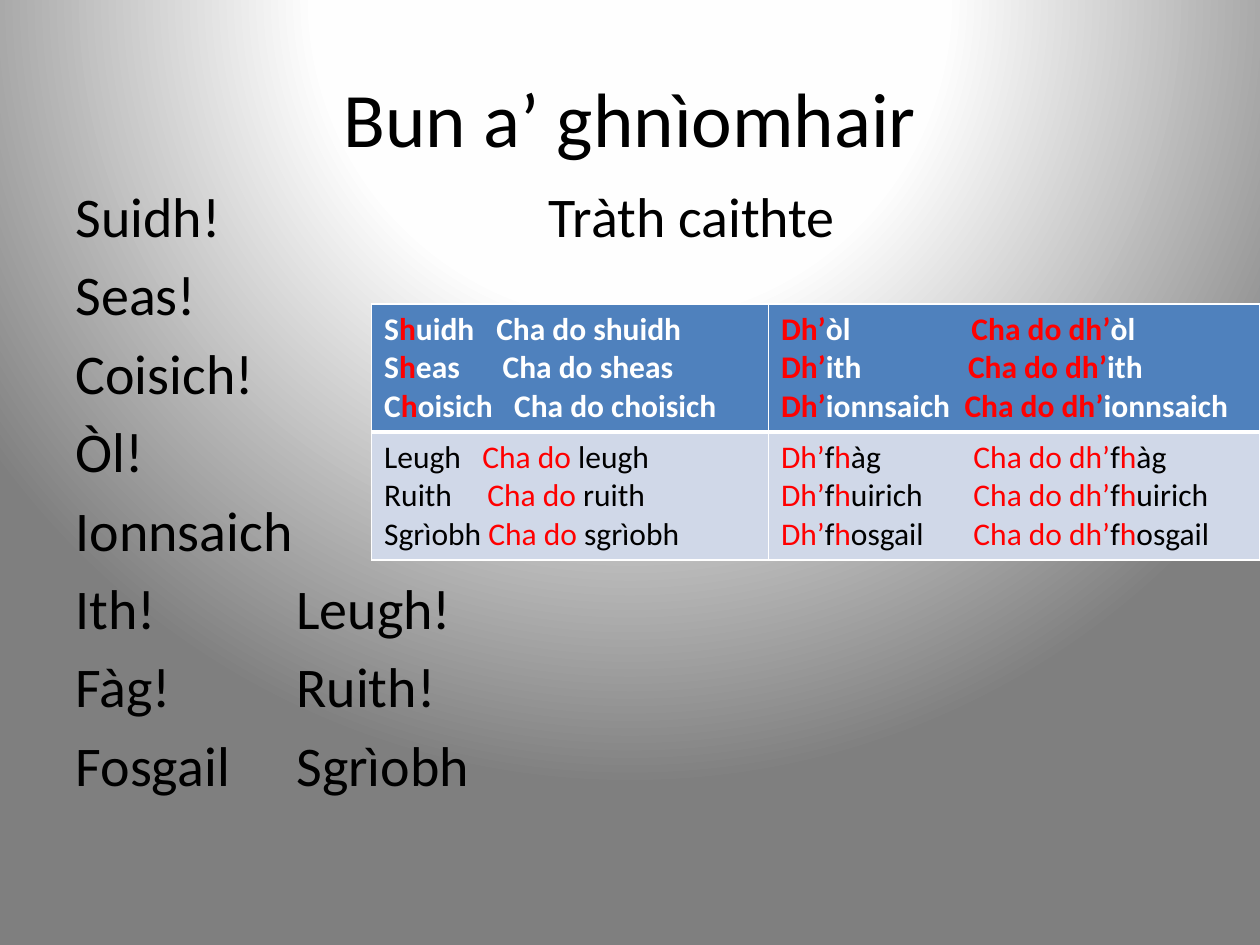
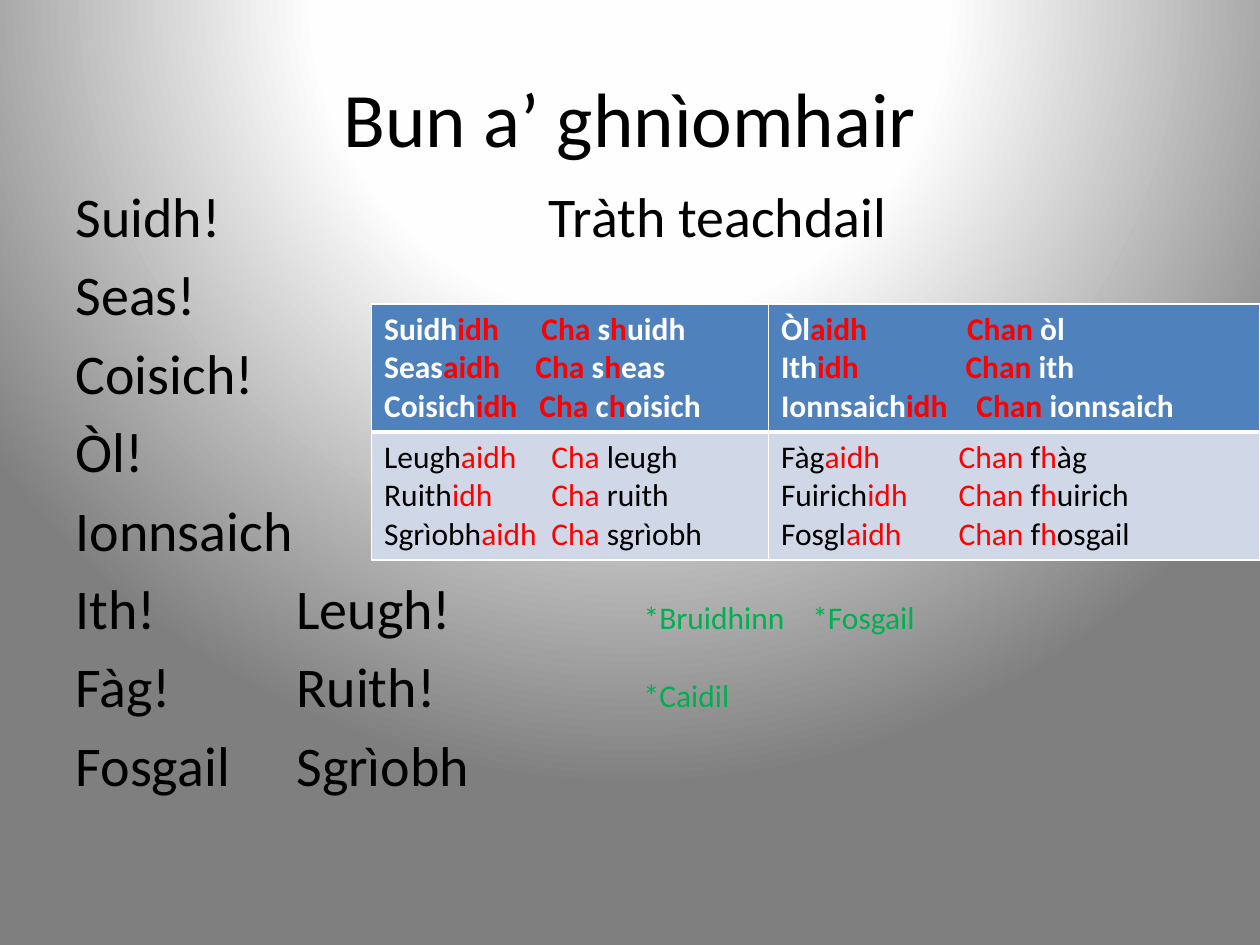
from lxml import etree
from pptx import Presentation
from pptx.dml.color import RGBColor
from pptx.enum.text import MSO_ANCHOR, MSO_AUTO_SIZE, PP_ALIGN
from pptx.oxml import parse_xml
from pptx.oxml.ns import nsdecls, qn
from pptx.util import Cm, Pt

BLACK = RGBColor(0x00, 0x00, 0x00)
WHITE = RGBColor(0xFF, 0xFF, 0xFF)
RED = RGBColor(0xFF, 0x00, 0x00)
GREEN = RGBColor(0x00, 0xB0, 0x50)
HEADER_BLUE = RGBColor(0x4F, 0x81, 0xBD)
PALE_BLUE = RGBColor(0xD0, 0xD8, 0xE8)
FONT = "Calibri"
TITLE = "Bun a’ ghnìomhair"
TENSE_TAB = [9.54]
VERB_TABS = [4.45, 11.45, 14.85]

# Text in [brackets] is accented. Each cell is (tab stop of each line in cm, lines).
TENSES = [
    {
        "verbs": ["Suidh!\tTràth caithte", "Seas!", "Coisich!", "Òl!", "Ionnsaich",
                  "Ith!\tLeugh!", "Fàg!\tRuith!", "Fosgail\tSgrìobh"],
        "cells": [
            [([2.26, 2.39, 2.62], ["S[h]uidh\tCha do shuidh",
                                   "S[h]eas\tCha do sheas",
                                   "C[h]oisich\tCha do choisich"]),
             ([3.84, 3.77, 3.7], ["[Dh’]òl\t[Cha do dh’]òl",
                                  "[Dh’]ith\t[Cha do dh’]ith",
                                  "[Dh’]ionnsaich\t[Cha do dh’]ionnsaich"])],
            [([1.98, 2.08, 2.1], ["Leugh\t[Cha do ]leugh",
                                  "Ruith\t[Cha do ]ruith",
                                  "Sgrìobh\t[Cha do ]sgrìobh"]),
             ([3.88] * 3, ["[Dh’]f[h]àg\t[Cha do dh’]f[h]àg",
                           "[Dh’]f[h]uirich\t[Cha do dh’]f[h]uirich",
                           "[Dh’]f[h]osgail\t[Cha do dh’]f[h]osgail"])],
        ],
    },
    {
        "verbs": ["Suidh!\tTràth teachdail", "Seas!", "Coisich!", "Òl!", "Ionnsaich",
                  "Ith!\tLeugh!\t[*Bruidhinn\t*Fosgail]",
                  "Fàg!\tRuith!\t[*Caidil]", "Fosgail\tSgrìobh"],
        "cells": [
            [([3.17, 3.05, 3.13], ["Suidh[idh\tCha] s[h]uidh",
                                   "Seas[aidh\tCha ]s[h]eas",
                                   "Coisich[idh\tCha] c[h]oisich"]),
             ([3.75, 3.72, 3.94], ["Òl[aidh\tChan ]òl",
                                   "Ith[idh\tChan ]ith",
                                   "Ionnsaich[idh\tChan ]ionnsaich"])],
            [([3.37] * 3, ["Leugh[aidh\tCha ]leugh",
                           "Ruith[idh\tCha ]ruith",
                           "Sgrìobh[aidh\tCha ]sgrìobh"]),
             ([3.58] * 3, ["Fàg[aidh\tChan ]f[h]àg",
                           "Fuirich[idh\tChan ]f[h]uirich",
                           "Fosgl[aidh\tChan ]f[h]osgail"])],
        ],
    },
]


def write_lines(text_frame, lines, size, color, accent, bold=False):
    """Fill the frame; bracketed parts get the accent colour at 18 pt."""
    text_frame.text = "\n".join([""] * len(lines))
    for paragraph, line in zip(text_frame.paragraphs, lines):
        for index, part in enumerate(line.replace("]", "[").split("[")):
            if part:
                run = paragraph.add_run()
                run.text = part
                run.font.name = FONT
                run.font.bold = bold
                run.font.size = Pt(18 if index % 2 else size)
                run.font.color.rgb = accent if index % 2 else color


def set_tabs(paragraph, stops):
    """Give the paragraph left tab stops, in cm."""
    tab_list = etree.SubElement(paragraph._p.get_or_add_pPr(), qn("a:tabLst"))
    for stop in stops:
        etree.SubElement(tab_list, qn("a:tab"), pos=str(int(Cm(stop))), algn="l")


presentation = Presentation()
presentation.slide_width = Cm(25.4)
presentation.slide_height = Cm(19.05)

# Shared radial background
master = presentation.slide_master
master.background.fill.solid()
solid_fill = master.element.find(".//" + qn("p:bgPr")).find(qn("a:solidFill"))
stops = "".join(
    f'<a:gs pos="{position * 1000}"><a:srgbClr val="{color}"/></a:gs>'
    for position, color in [(0, "FFFFFF"), (40, "FEFEFE"), (100, "7F7F7F")])
solid_fill.getparent().replace(solid_fill, parse_xml(
    f'<a:gradFill {nsdecls("a")} rotWithShape="1"><a:gsLst>{stops}</a:gsLst>'
    '<a:path path="circle">'
    '<a:fillToRect l="50000" t="-80000" r="50000" b="180000"/>'
    '</a:path></a:gradFill>'))

# Shared list style: no bullet; a hanging indent would cancel the tab stops
list_style = master.element.find(".//" + qn("p:bodyStyle")).find(qn("a:lvl1pPr"))
list_style.set("marL", "0")
list_style.attrib.pop("indent", None)
bullet = list_style.find(qn("a:buChar"))
list_style.replace(bullet, parse_xml(f'<a:buNone {nsdecls("a")}/>'))

for tense in TENSES:
    slide = presentation.slides.add_slide(presentation.slide_layouts[1])

    # Title
    title = slide.shapes.title
    title.left, title.top, title.width, title.height = Cm(1.27), Cm(0.76), Cm(22.86), Cm(3.18)
    title.text_frame.vertical_anchor = MSO_ANCHOR.MIDDLE
    write_lines(title.text_frame, [TITLE], 44, BLACK, BLACK)
    title.text_frame.paragraphs[0].alignment = PP_ALIGN.CENTER

    # Verb list
    body = slide.placeholders[1]
    body.left, body.top, body.width, body.height = Cm(1.27), Cm(3.53), Cm(22.86), Cm(13.49)
    body.text_frame.auto_size = MSO_AUTO_SIZE.NONE
    write_lines(body.text_frame, tense["verbs"], 32, BLACK, GREEN)
    for index, paragraph in enumerate(body.text_frame.paragraphs):
        set_tabs(paragraph, VERB_TABS if index else TENSE_TAB)

    # Table of verb forms
    table = slide.shapes.add_table(2, 2, Cm(7.49), Cm(6.13), Cm(17.91), Cm(5.16)).table
    table.columns[0].width, table.columns[1].width = Cm(8), Cm(9.91)
    for row, cells in enumerate(tense["cells"]):
        header = row == 0
        for column, (tab_stops, lines) in enumerate(cells):
            cell = table.cell(row, column)
            cell.fill.solid()
            cell.fill.fore_color.rgb = HEADER_BLUE if header else PALE_BLUE
            # White rule between the rows
            edge = "lnB" if header else "lnT"
            cell._tc.get_or_add_tcPr().insert(0, parse_xml(
                f'<a:{edge} {nsdecls("a")} w="{Pt(3)}"><a:solidFill>'
                f'<a:srgbClr val="{WHITE}"/></a:solidFill></a:{edge}>'))
            write_lines(cell.text_frame, lines, 18, WHITE if header else BLACK, RED, header)
            for paragraph, tab_stop in zip(cell.text_frame.paragraphs, tab_stops):
                set_tabs(paragraph, [tab_stop])

presentation.save("out.pptx")
